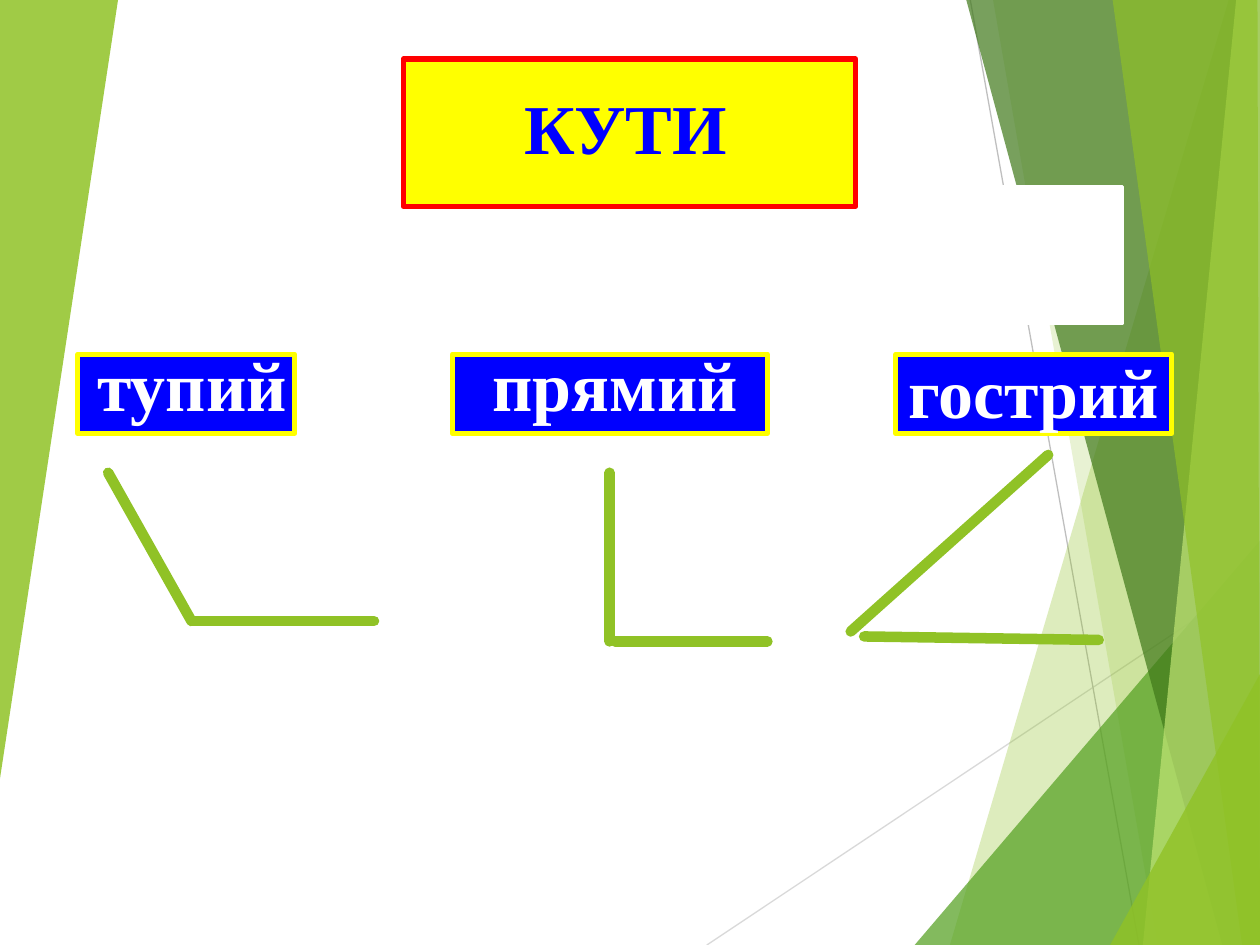
from dataclasses import dataclass

from lxml import etree
from pptx import Presentation, util as u
from pptx.dml.color import RGBColor
from pptx.enum import shapes, text
from pptx.oxml.ns import qn

Point = tuple[float, float]


@dataclass(frozen=True)
class Theme:
    font: str = "Times New Roman"
    text_size: int = 40
    white: str = "FFFFFF"
    yellow: str = "FFFF00"
    red: str = "FF0000"
    blue: str = "0000FF"
    lime: str = "90C226"
    pale_lime: str = "C0E474"
    green: str = "54A021"
    dark_green: str = "3F7819"
    grey: str = "BFBFBF"
    light_grey: str = "D9D9D9"
    hairline: float = 0.75
    thin: float = 1.5
    border: float = 3
    ray: float = 6


@dataclass(frozen=True)
class Facet:
    """Translucent background polygon, points in cm, opacity in percent."""
    points: list[Point]
    color: str
    opacity: int


@dataclass(frozen=True)
class Angle:
    """Angle name on a plate, with its two rays; lengths in cm."""
    name: str
    plate_left: float
    plate_width: float
    text_left: float
    text_top: float
    rays: list[tuple[Point, Point]]


THEME = Theme()
WIDTH, HEIGHT = 25.4, 19.05
PLATE_TOP, PLATE_HEIGHT = 7.14, 1.6
TEXT_WIDTH, TEXT_HEIGHT = 9.73, 1.96
TOP_RIGHT, BOTTOM_RIGHT = (WIDTH, 0), (WIDTH, HEIGHT)

FACETS = [
    Facet([(24.77, 0), (19.15, HEIGHT), BOTTOM_RIGHT, TOP_RIGHT], THEME.lime, 30),
    Facet([(20.02, 0), (23.34, HEIGHT), BOTTOM_RIGHT, TOP_RIGHT], THEME.lime, 20),
    Facet([(18.44, HEIGHT), (WIDTH, 10.9), BOTTOM_RIGHT], THEME.green, 72),
    Facet([(19.48, 0), (24.64, HEIGHT), BOTTOM_RIGHT, TOP_RIGHT], THEME.dark_green, 70),
    Facet([(24.92, 0), (23.04, HEIGHT), BOTTOM_RIGHT, TOP_RIGHT], THEME.pale_lime, 70),
    Facet([(22.43, 0), (25.04, HEIGHT), BOTTOM_RIGHT, (25.35, 0)], THEME.lime, 65),
    Facet([(22.38, HEIGHT), (WIDTH, 13.59), BOTTOM_RIGHT], THEME.lime, 80),
    Facet([(0, 0), (2.38, 0), (0, 15.7)], THEME.lime, 85),
]

ANGLES = [
    Angle("тупий", 1.57, 4.37, -0.99, 6.76,
          [((2.18, 9.53), (3.86, 12.52)), ((3.86, 12.52), (7.54, 12.52))]),
    Angle("прямий", 9.12, 6.35, 7.54, 6.76,
          [((12.29, 9.53), (12.29, 12.93)), ((12.4, 12.93), (15.47, 12.93))]),
    Angle("гострий", 18.06, 5.56, 15.98, 6.91,
          [((17.15, 12.73), (21.13, 9.17)), ((17.42, 12.83), (22.15, 12.9))]),
]


def rgb(color: str) -> RGBColor:
    return RGBColor.from_string(color)


def draw_facet(slide, facet: Facet) -> None:
    points = [(u.Cm(x), u.Cm(y)) for x, y in facet.points]
    builder = slide.shapes.build_freeform(*points[0])
    builder.add_line_segments(points[1:], close=True)
    shape = builder.convert_to_shape()
    shape.shadow.inherit = False
    shape.line.fill.background()
    shape.fill.solid()
    shape.fill.fore_color.rgb = rgb(facet.color)
    color = shape.fill._xPr.find(f"{qn('a:solidFill')}/{qn('a:srgbClr')}")
    etree.SubElement(color, qn("a:alpha"), val=str(facet.opacity * 1000))


def draw_line(slide, start: Point, end: Point, color: str, width: float) -> None:
    connector = slide.shapes.add_connector(
        shapes.MSO_CONNECTOR.STRAIGHT, *(u.Cm(value) for value in (*start, *end)))
    connector.line.color.rgb = rgb(color)
    connector.line.width = u.Pt(width)
    connector.line._get_or_add_ln().set("cap", "rnd")
    etree.SubElement(connector._element.spPr, qn("a:effectLst"))


def draw_box(slide, left: float, top: float, width: float, height: float,
             fill: str, line: str, line_width: float) -> None:
    shape = slide.shapes.add_shape(
        shapes.MSO_SHAPE.RECTANGLE, *map(u.Cm, (left, top, width, height)))
    shape.shadow.inherit = False
    shape.fill.solid()
    shape.fill.fore_color.rgb = rgb(fill)
    shape.line.color.rgb = rgb(line)
    shape.line.width = u.Pt(line_width)


def write_text(shape, words: str, left: float, top: float, color: str) -> None:
    shape.left, shape.top = u.Cm(left), u.Cm(top)
    shape.width, shape.height = u.Cm(TEXT_WIDTH), u.Cm(TEXT_HEIGHT)
    frame = shape.text_frame
    frame.text = words
    frame.word_wrap = True
    frame.auto_size = text.MSO_AUTO_SIZE.SHAPE_TO_FIT_TEXT
    frame.vertical_anchor = text.MSO_ANCHOR.TOP
    paragraph = frame.paragraphs[0]
    paragraph.alignment = text.PP_ALIGN.CENTER
    paragraph.font.name = THEME.font
    paragraph.font.size = u.Pt(THEME.text_size)
    paragraph.font.bold = True
    paragraph.font.color.rgb = rgb(color)


def main() -> None:
    presentation = Presentation()
    presentation.slide_width, presentation.slide_height = u.Cm(WIDTH), u.Cm(HEIGHT)
    slide = presentation.slides.add_slide(presentation.slide_layouts[5])

    # Background lines and facets
    draw_line(slide, (14.25, HEIGHT), (WIDTH, 11.61), THEME.light_grey, THEME.hairline)
    draw_line(slide, (19.56, 0), (22.96, HEIGHT), THEME.grey, THEME.hairline)
    for facet in FACETS:
        draw_facet(slide, facet)

    # White panel and title box, with the title brought in front
    draw_box(slide, 12.9, 3.76, 9.73, 2.77, THEME.white, THEME.white, THEME.thin)
    draw_box(slide, 8.13, 1.19, 9.12, 2.97, THEME.yellow, THEME.red, THEME.border)
    title = slide.shapes.title
    slide.shapes._spTree.append(title._element)
    write_text(title, "КУТИ", 7.75, 1.57, THEME.blue)

    # Named angles
    for angle in ANGLES:
        draw_box(slide, angle.plate_left, PLATE_TOP, angle.plate_width, PLATE_HEIGHT,
                 THEME.blue, THEME.yellow, THEME.border)
        label = slide.shapes.add_textbox(0, 0, 0, 0)
        write_text(label, angle.name, angle.text_left, angle.text_top, THEME.white)
        for start, end in angle.rays:
            draw_line(slide, start, end, THEME.lime, THEME.ray)

    presentation.save("out.pptx")


if __name__ == "__main__":
    main()
